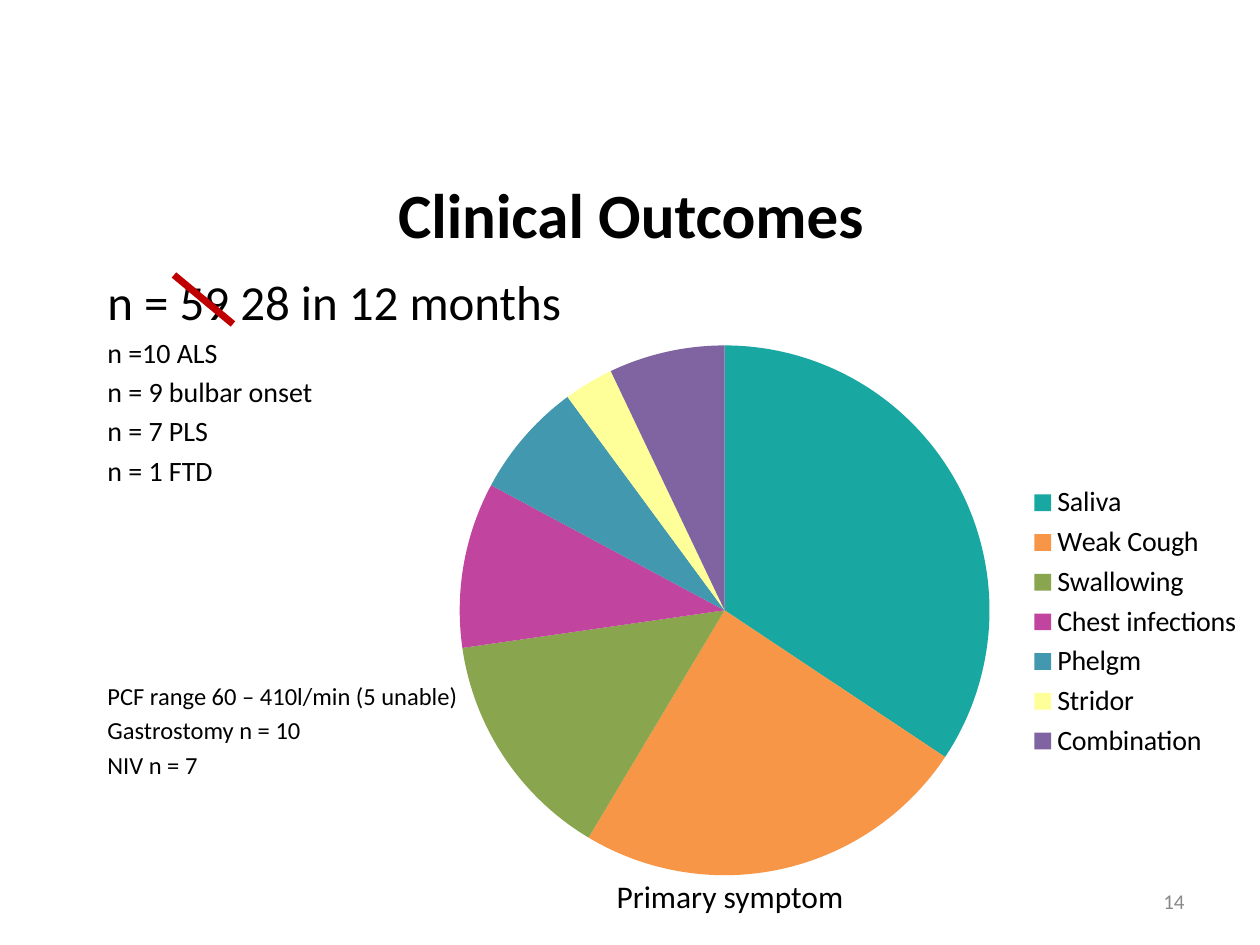
from dataclasses import dataclass
from typing import Any

from lxml.etree import SubElement
from pptx import Presentation
from pptx.chart.data import CategoryChartData
from pptx.dml.color import RGBColor
from pptx.enum.chart import XL_CHART_TYPE, XL_LEGEND_POSITION
from pptx.enum.shapes import MSO_CONNECTOR
from pptx.enum.text import MSO_ANCHOR, PP_ALIGN
from pptx.oxml.ns import qn
from pptx.util import Emu, Pt

EMU_PER_PX = 914400 / 126


@dataclass(frozen=True)
class Theme:
    font: str = "Calibri"
    ink: str = "000000"
    muted: str = "898989"
    strike: str = "C00000"
    title: int = 36
    lead: int = 28
    caption: int = 18
    detail: int = 16
    note: int = 14
    number: int = 12
    chart: int = 10
    strike_width: int = 4


THEME = Theme()


@dataclass(frozen=True)
class Line:
    text: str
    size: int
    before: float = 0
    bold: bool = False
    color: str = THEME.ink


@dataclass(frozen=True)
class TextBlock:
    box: tuple[int, int, int, int]
    lines: tuple[Line, ...]
    align: PP_ALIGN = PP_ALIGN.LEFT
    anchor: MSO_ANCHOR = MSO_ANCHOR.TOP


@dataclass(frozen=True)
class Symptom:
    name: str
    share: int
    color: str


DETAILS = ("n =10 ALS", "n = 9 bulbar onset", "n = 7 PLS", "n = 1 FTD")
NOTES = ("PCF range 60 – 410l/min (5 unable)", "Gastrostomy n = 10", "NIV n = 7")
NOTES_GAP = 111

FINDINGS = (
    Line("n = 59 28 in 12 months", THEME.lead),
    *(Line(text, THEME.detail, 3.2) for text in DETAILS),
    *(Line(text, THEME.note, 2.8 if row else NOTES_GAP) for row, text in enumerate(NOTES)),
)

TEXT_BLOCKS = (
    TextBlock((64, 135, 1134, 157), (Line("Clinical Outcomes", THEME.title, bold=True),),
              PP_ALIGN.CENTER, MSO_ANCHOR.MIDDLE),
    TextBlock((95, 265, 1101, 559), FINDINGS),
    TextBlock((903, 876, 294, 50), (Line("14", THEME.number, color=THEME.muted),),
              PP_ALIGN.RIGHT, MSO_ANCHOR.MIDDLE),
)
CAPTION = TextBlock((551, 871, 358, 50), (Line("Primary symptom", THEME.caption),),
                    PP_ALIGN.CENTER)

SYMPTOMS = (
    Symptom("Saliva", 34, "18A8A1"),
    Symptom("Weak Cough", 24, "F79646"),
    Symptom("Swallowing", 14, "89A54E"),
    Symptom("Chest infections", 10, "C1459E"),
    Symptom("Phelgm", 7, "4198AF"),
    Symptom("Stridor", 3, "FFFF99"),
    Symptom("Combination", 7, "8064A2"),
)
PIE_BOX = (399, 334, 857, 576)
PIE_LAYOUT = {"layoutTarget": "inner", "xMode": "edge", "yMode": "edge",
              "x": 0.06, "y": 0.02, "w": 0.64, "h": 0.92}
STRIKE_ENDS = (174, 275, 233, 324)


def px(values: tuple[int, ...]) -> list[Emu]:
    return [Emu(round(value * EMU_PER_PX)) for value in values]


def apply(target: Any, values: dict[str, Any]) -> None:
    for name, value in values.items():
        setattr(target, name, value)


def style_font(font: Any, size: int, color: str = THEME.ink, bold: bool = False) -> None:
    apply(font, {"name": THEME.font, "size": Pt(size), "bold": bold})
    font.color.rgb = RGBColor.from_string(color)


def draw_text(slide: Any, block: TextBlock) -> None:
    frame = slide.shapes.add_textbox(*px(block.box)).text_frame
    apply(frame, {"word_wrap": True, "vertical_anchor": block.anchor})
    for row, line in enumerate(block.lines):
        paragraph = frame.add_paragraph() if row else frame.paragraphs[0]
        apply(paragraph, {"alignment": block.align, "space_before": Pt(line.before)})
        run = paragraph.add_run()
        run.text = line.text
        style_font(run.font, line.size, line.color, line.bold)


def draw_pie(slide: Any, symptoms: tuple[Symptom, ...]) -> None:
    data = CategoryChartData()
    data.categories = [symptom.name for symptom in symptoms]
    data.add_series("Series 1", [symptom.share for symptom in symptoms])
    chart = slide.shapes.add_chart(XL_CHART_TYPE.PIE, *px(PIE_BOX), data).chart
    apply(chart, {"has_title": False, "has_legend": True})
    style_font(chart.font, THEME.chart)
    apply(chart.legend, {"position": XL_LEGEND_POSITION.RIGHT, "include_in_layout": False})
    style_font(chart.legend.font, THEME.detail)

    # Slice colours
    pie = chart.plots[0]
    pie.vary_by_categories = True
    for index, symptom in enumerate(symptoms):
        fill = pie.series[0].points[index].format.fill
        fill.solid()
        fill.fore_color.rgb = RGBColor.from_string(symptom.color)

    # Fixed plot area, leaving room for the legend
    plot_area = chart.element.find(f".//{qn('c:plotArea')}")
    for old_layout in plot_area.findall(qn("c:layout")):
        plot_area.remove(old_layout)
    layout = SubElement(plot_area, qn("c:layout"))
    plot_area.insert(0, layout)
    manual = SubElement(layout, qn("c:manualLayout"))
    for name, value in PIE_LAYOUT.items():
        SubElement(manual, qn(f"c:{name}")).set("val", str(value))


def draw_strike(slide: Any) -> None:
    strike = slide.shapes.add_connector(MSO_CONNECTOR.STRAIGHT, *px(STRIKE_ENDS))
    strike.line.color.rgb = RGBColor.from_string(THEME.strike)
    strike.line.width = Pt(THEME.strike_width)
    SubElement(strike.element.spPr, qn("a:effectLst"))


def main() -> None:
    deck = Presentation()
    apply(deck, dict(zip(("slide_width", "slide_height"), px((1260, 945)))))
    slide = deck.slides.add_slide(deck.slide_layouts[6])

    # Title, findings and slide number
    for block in TEXT_BLOCKS:
        draw_text(slide, block)

    # Pie with its caption
    draw_pie(slide, SYMPTOMS)
    draw_text(slide, CAPTION)

    # Line through the replaced count
    draw_strike(slide)
    deck.save("out.pptx")


if __name__ == "__main__":
    main()
